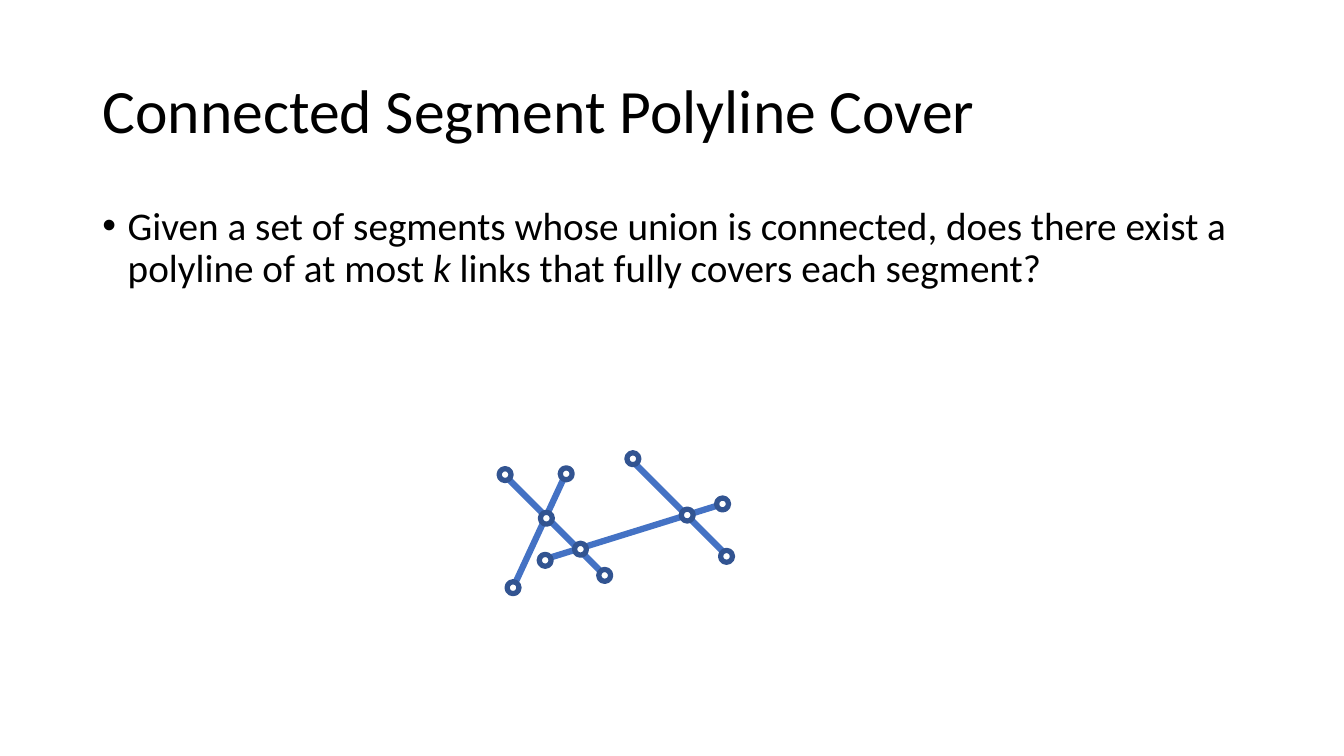
"""Build the slide on the connected segment polyline cover problem."""
from lxml import etree
from pptx import Presentation
from pptx.dml.color import RGBColor
from pptx.enum.shapes import MSO_CONNECTOR as Link, MSO_SHAPE as Form
from pptx.enum.text import MSO_ANCHOR as Anchor, PP_ALIGN as Align
from pptx.oxml.ns import qn
from pptx.util import Cm, Pt

BLACK = RGBColor(0x00, 0x00, 0x00)
WHITE = RGBColor(0xFF, 0xFF, 0xFF)
BLUE = RGBColor(0x44, 0x72, 0xC4)
NAVY = RGBColor(0x32, 0x54, 0x91)
LEFT, WIDE = Cm(2.33), Cm(29.21)


def style(para, size):
    para.alignment = Align.LEFT
    para.line_spacing = 0.9
    for run in para.runs:
        font = run.font
        font.name = "Calibri"
        font.size = Pt(size)
        font.color.rgb = BLACK


deck = Presentation()
deck.slide_width, deck.slide_height = Cm(33.87), Cm(19.05)
slide = deck.slides.add_slide(deck.slide_layouts[5])
shapes = slide.shapes

title = shapes.title
title.left, title.top, title.width, title.height = LEFT, Cm(1.01), WIDE, Cm(3.68)
title.text_frame.text = "Connected Segment Polyline Cover"
title.text_frame.vertical_anchor = Anchor.MIDDLE
style(title.text_frame.paragraphs[0], 44)

body = shapes.add_textbox(LEFT, Cm(5.08), WIDE, Cm(12.09))
body.text_frame.word_wrap = True
para = body.text_frame.paragraphs[0]
for text in (
    "Given a set of segments whose union is connected, does there exist a polyline of at most ",
    "k",
    " links that fully covers each segment?",
):
    run = para.add_run()
    run.text = text
    run.font.italic = text == "k"
style(para, 28)
para.space_before = Pt(10)
props = para._p.get_or_add_pPr()
props.set("marL", str(Cm(0.64)))
props.set("indent", str(-Cm(0.64)))
etree.SubElement(props, qn("a:buFont")).set("typeface", "Arial")
etree.SubElement(props, qn("a:buChar")).set("char", "•")

segments = [
    (12.7, 11.96, 15.24, 14.5),
    (13.64, 14.12, 18.21, 12.7),
    (15.85, 11.53, 18.39, 14.07),
    (14.25, 11.96, 12.93, 14.81),
]
for ends in segments:
    line = shapes.add_connector(Link.STRAIGHT, *map(Cm, ends))
    line.line.color.rgb = BLUE
    line.line.width = Pt(4.5)
    etree.SubElement(line._element.spPr, qn("a:effectLst"))

SIZE = 0.3
nodes = [
    (12.73, 11.96), (12.93, 14.81), (13.77, 13.06), (14.27, 11.94),
    (14.63, 13.84), (13.74, 14.12), (15.24, 14.5), (17.32, 12.98),
    (18.31, 14.02), (18.21, 12.7), (15.95, 11.56),
]
for x, y in nodes:
    node = shapes.add_shape(
        Form.OVAL, Cm(x - SIZE / 2), Cm(y - SIZE / 2), Cm(SIZE), Cm(SIZE))
    node.shadow.inherit = False
    node.fill.solid()
    node.fill.fore_color.rgb = WHITE
    node.line.color.rgb = NAVY
    node.line.width = Pt(3.75)

deck.save("out.pptx")
